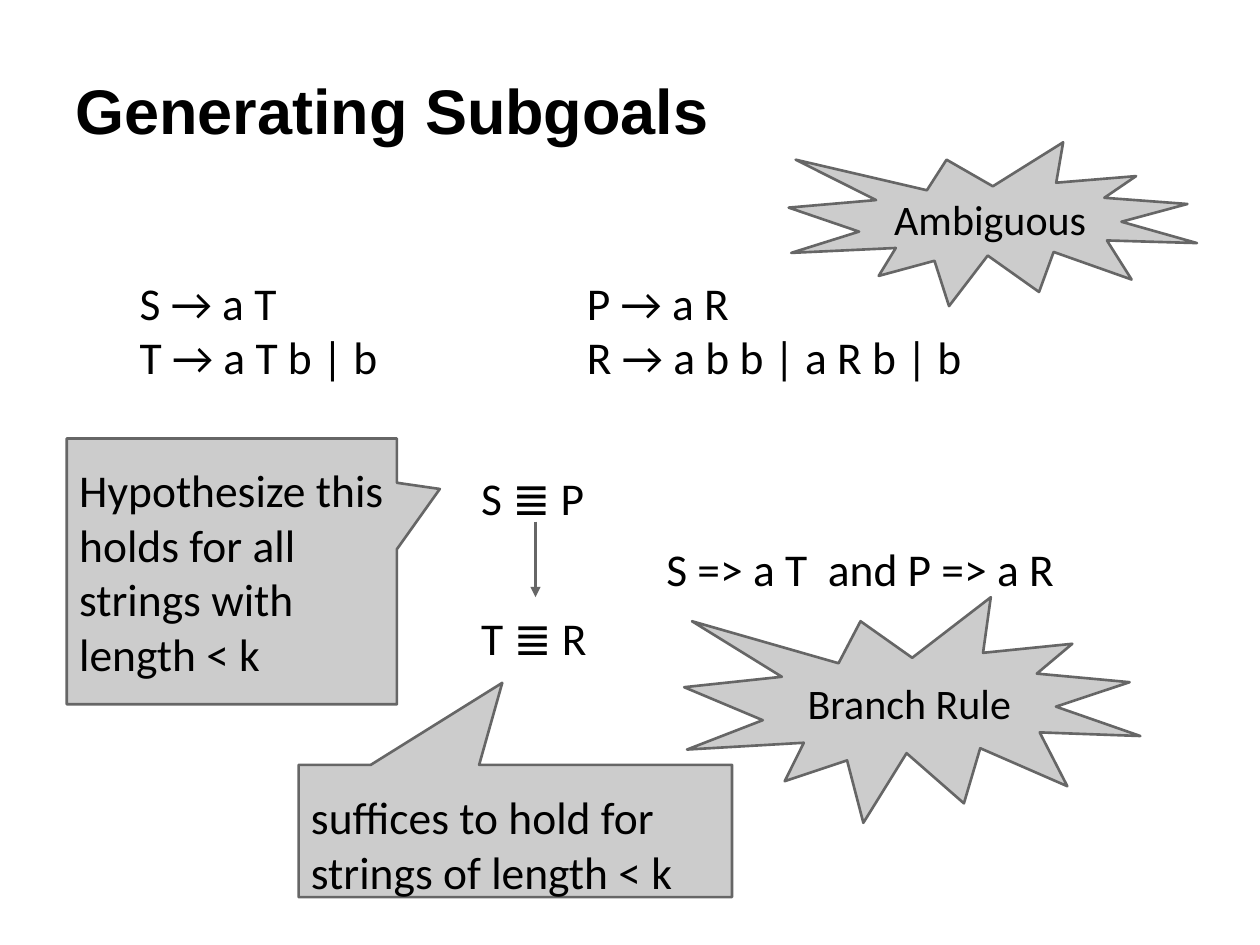
from dataclasses import dataclass

from lxml import etree
from pptx import Presentation
from pptx.dml.color import RGBColor
from pptx.enum.shapes import MSO_CONNECTOR, MSO_SHAPE
from pptx.enum.text import MSO_ANCHOR, PP_ALIGN
from pptx.oxml.ns import qn
from pptx.slide import Slide
from pptx.util import Inches, Pt


def color(hex_string):
    return RGBColor.from_string(hex_string)


@dataclass
class Board:
    slide: Slide
    cell: float = 0.1
    ink: str = "000000"
    fill: str = "CCCCCC"
    edge: str = "666666"
    edge_width: float = 1.5
    body_font: str = "Calibri"
    body_size: int = 26
    burst_size: int = 24
    inset: float = 1

    def grid(self, *cells):
        return [Inches(count * self.cell) for count in cells]

    def add_lines(self, holder, lines, size, font=None, bold=False,
                  anchor=MSO_ANCHOR.TOP, align=PP_ALIGN.LEFT):
        frame = holder.text_frame
        frame.word_wrap = True
        frame.vertical_anchor = anchor
        (frame.margin_left, frame.margin_top,
         frame.margin_right, frame.margin_bottom) = self.grid(*[self.inset] * 4)
        for index, line in enumerate(lines):
            paragraph = frame.add_paragraph() if index else frame.paragraphs[0]
            paragraph.alignment = align
            run = paragraph.add_run()
            run.text = line
            run.font.name = font or self.body_font
            run.font.size = Pt(size)
            run.font.bold = bold
            run.font.color.rgb = color(self.ink)

    def title(self, box, wording):
        heading = self.slide.shapes.add_textbox(*self.grid(*box))
        self.add_lines(heading, [wording], 36, "Arial", True, MSO_ANCHOR.BOTTOM)

    def text(self, box, *lines):
        block = self.slide.shapes.add_textbox(*self.grid(*box))
        self.add_lines(block, lines, self.body_size)

    def panel(self, preset, box, wording, size, align):
        panel = self.slide.shapes.add_shape(preset, *self.grid(*box))
        panel.shadow.inherit = False
        panel.fill.solid()
        panel.fill.fore_color.rgb = color(self.fill)
        self.stroke(panel.line)
        self.add_lines(panel, [wording], size, anchor=MSO_ANCHOR.MIDDLE, align=align)
        return panel

    def burst(self, box, wording):
        self.panel(MSO_SHAPE.EXPLOSION1, box, wording, self.burst_size, PP_ALIGN.CENTER)

    def callout(self, box, wording, pointer, drop=0):
        callout = self.panel(MSO_SHAPE.ROUNDED_RECTANGULAR_CALLOUT, box, wording,
                             self.body_size, PP_ALIGN.LEFT)
        for index, value in enumerate((*pointer, 0)):
            callout.adjustments[index] = value
        frame = callout.text_frame
        frame.margin_top, frame.margin_bottom = self.grid(self.inset + drop, self.inset - drop)

    def arrow(self, start, end):
        arrow = self.slide.shapes.add_connector(
            MSO_CONNECTOR.STRAIGHT, *self.grid(*start, *end))
        self.stroke(arrow.line)
        properties = arrow._element.spPr
        etree.SubElement(properties.find(qn("a:ln")), qn("a:tailEnd"), type="triangle")
        etree.SubElement(properties, qn("a:effectLst"))

    def stroke(self, line):
        line.color.rgb = color(self.edge)
        line.width = Pt(self.edge_width)


def main():
    deck = Presentation()
    deck.slide_width, deck.slide_height = Inches(10), Inches(7.5)
    board = Board(deck.slides.add_slide(deck.slide_layouts[6]))

    board.title((5, 3, 90, 9.7), "Generating Subgoals")

    grammars = (
        (10.1, "S → a T", "T → a T b | b"),
        (45.6, "P → a R", "R → a b b | a R b | b"),
    )
    for column, *productions in grammars:
        board.text((column, 20.8, 34.4, 13), *productions)
    board.burst((62.6, 11.3, 32.4, 13), "Ambiguous")

    goal_column, goal_width, goal_height = 37.2, 10.6, 5.1
    goal_row, subgoal_row = 36.3, 47.4
    for row, equivalence in ((goal_row, "S ≣ P"), (subgoal_row, "T ≣ R")):
        board.text((goal_column, row, goal_width, goal_height), equivalence)
    middle = goal_column + goal_width / 2
    board.arrow((middle, goal_row + goal_height), (middle, subgoal_row))

    board.text((51.9, 41.9, 33.6, goal_height), "S => a T  and P => a R")
    board.burst((54.3, subgoal_row, 36.2, 17.9), "Branch Rule")

    board.callout((5.3, 34.8, 26.2, 21.1),
                  "Hypothesize this holds for all strings with length < k", (0.63, -0.31))
    board.callout((23.7, 60.7, 34.4, 10.5),
                  "suffices to hold for strings of length < k", (-0.03, -1.12), drop=1)

    deck.save("out.pptx")


if __name__ == "__main__":
    main()
